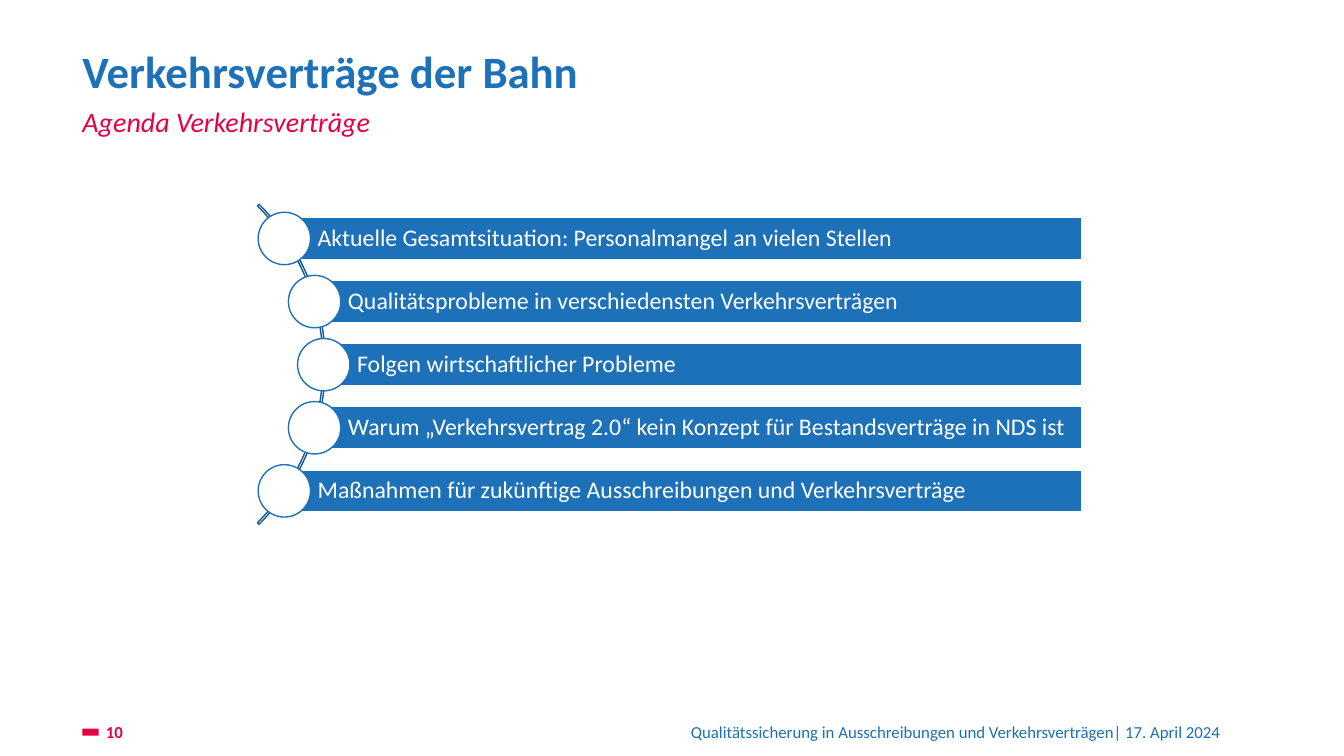
import math
from dataclasses import dataclass

import pptx
import pptx.dml.color
import pptx.enum.shapes
import pptx.enum.text
import pptx.shapes.autoshape
import pptx.slide
import pptx.util
from pptx.util import Cm

RGB = pptx.dml.color.RGBColor.from_string
SHAPES = pptx.enum.shapes.MSO_SHAPE
ALIGN = pptx.enum.text.PP_ALIGN
ANCHOR = pptx.enum.text.MSO_ANCHOR


@dataclass(frozen=True)
class Theme:
    font: str = "Calibri"
    blue: str = "1D71B8"
    footer_blue: str = "1D70B7"
    arc_blue: str = "175A93"
    red: str = "E50045"
    subtitle_red: str = "E50046"
    white: str = "FFFFFF"
    title_size: int = 32
    subtitle_size: int = 20
    agenda_size: int = 17
    footer_size: int = 12
    line_width: int = 1


@dataclass(frozen=True)
class Box:
    left: float
    top: float
    width: float
    height: float


@dataclass(frozen=True)
class Style:
    size: int
    color: str
    bold: bool = False
    italic: bool = False
    align: ALIGN = ALIGN.LEFT
    anchor: ANCHOR = ANCHOR.TOP
    margins: tuple[float, float, float, float] = (0, 0, 0, 0)
    line_spacing: float | pptx.util.Pt = 1.0


@dataclass(frozen=True)
class Label:
    text: str
    box: Box
    style: Style


THEME = Theme()
CENTER_X, CENTER_Y = 2.57, 9.19
RADIUS, PITCH = 5.59, 1.59
BAR_RIGHT, BAR_HEIGHT, DOT_SIZE = 27.25, 1.06, 1.32
ARC_BOX = Box(-3.2, 3.48, 11.4, 11.4)
MARKER_BOX = Box(2.08, 18.36, 0.41, 0.18)

AGENDA = (
    "Aktuelle Gesamtsituation: Personalmangel an vielen Stellen",
    "Qualitätsprobleme in verschiedensten Verkehrsverträgen",
    "Folgen wirtschaftlicher Probleme",
    "Warum „Verkehrsvertrag 2.0“ kein Konzept für Bestandsverträge in NDS ist",
    "Maßnahmen für zukünftige Ausschreibungen und Verkehrsverträge",
)
AGENDA_STYLE = Style(THEME.agenda_size, THEME.white, anchor=ANCHOR.MIDDLE,
                     margins=(0.84, 0.12, 0.12, 0.12), line_spacing=0.9)

LABELS = (
    Label("Verkehrsverträge der Bahn", Box(2.08, 1.32, 28.96, 1.47),
          Style(THEME.title_size, THEME.blue, bold=True,
                line_spacing=pptx.util.Pt(THEME.title_size))),
    Label("Agenda Verkehrsverträge", Box(2.08, 2.74, 28.96, 0.81),
          Style(THEME.subtitle_size, THEME.subtitle_red, italic=True, line_spacing=0.9)),
    Label("10", Box(2.67, 17.89, 1.32, 1.09),
          Style(THEME.footer_size, THEME.red, bold=True, anchor=ANCHOR.MIDDLE)),
    Label("Qualitätssicherung in Ausschreibungen und Verkehrsverträgen| 17. April 2024",
          Box(5.82, 17.89, 25.2, 1.09),
          Style(THEME.footer_size, THEME.footer_blue, align=ALIGN.RIGHT,
                anchor=ANCHOR.MIDDLE, margins=(0.25, 0.13, 0.25, 0.13))),
)


def lengths(box: Box) -> tuple[Cm, Cm, Cm, Cm]:
    return Cm(box.left), Cm(box.top), Cm(box.width), Cm(box.height)


def write(shape: pptx.shapes.autoshape.Shape, text: str, style: Style) -> None:
    frame = shape.text_frame
    frame.text = text
    frame.word_wrap = True
    frame.vertical_anchor = style.anchor
    (frame.margin_left, frame.margin_top,
     frame.margin_right, frame.margin_bottom) = map(Cm, style.margins)
    paragraph = frame.paragraphs[0]
    paragraph.alignment = style.align
    paragraph.line_spacing = style.line_spacing
    font = paragraph.runs[0].font
    font.name = THEME.font
    font.size = pptx.util.Pt(style.size)
    font.bold = style.bold
    font.italic = style.italic
    font.color.rgb = RGB(style.color)


def draw_shape(slide: pptx.slide.Slide, kind: SHAPES, box: Box, fill: str | None = None,
               line: str | None = None) -> pptx.shapes.autoshape.Shape:
    shape = slide.shapes.add_shape(kind, *lengths(box))
    shape.shadow.inherit = False
    if fill:
        shape.fill.solid()
        shape.fill.fore_color.rgb = RGB(fill)
    else:
        shape.fill.background()
    if line:
        shape.line.color.rgb = RGB(line)
        shape.line.width = pptx.util.Pt(THEME.line_width)
    else:
        shape.line.fill.background()
    return shape


def draw_label(slide: pptx.slide.Slide, label: Label) -> None:
    textbox = slide.shapes.add_textbox(*lengths(label.box))
    write(textbox, label.text, label.style)


def draw_agenda(slide: pptx.slide.Slide) -> None:
    arc = draw_shape(slide, SHAPES.BLOCK_ARC, ARC_BOX, line=THEME.arc_blue)
    for index, value in enumerate((189, 27, 0.005)):
        arc.adjustments[index] = value

    for index, topic in enumerate(AGENDA):
        offset = (index - (len(AGENDA) - 1) / 2) * PITCH
        x = CENTER_X + math.sqrt(RADIUS ** 2 - offset ** 2)
        y = CENTER_Y + offset
        bar = draw_shape(slide, SHAPES.RECTANGLE,
                         Box(x, y - BAR_HEIGHT / 2, BAR_RIGHT - x, BAR_HEIGHT),
                         THEME.blue, THEME.white)
        write(bar, topic, AGENDA_STYLE)
        draw_shape(slide, SHAPES.OVAL,
                   Box(x - DOT_SIZE / 2, y - DOT_SIZE / 2, DOT_SIZE, DOT_SIZE),
                   THEME.white, THEME.blue)


def main() -> None:
    presentation = pptx.Presentation()
    presentation.slide_width = Cm(33.87)
    presentation.slide_height = Cm(19.05)
    slide = presentation.slides.add_slide(presentation.slide_layouts[6])
    draw_shape(slide, SHAPES.RECTANGLE, MARKER_BOX, THEME.red)
    for label in LABELS:
        draw_label(slide, label)
    draw_agenda(slide)
    presentation.save("out.pptx")


if __name__ == "__main__":
    main()
